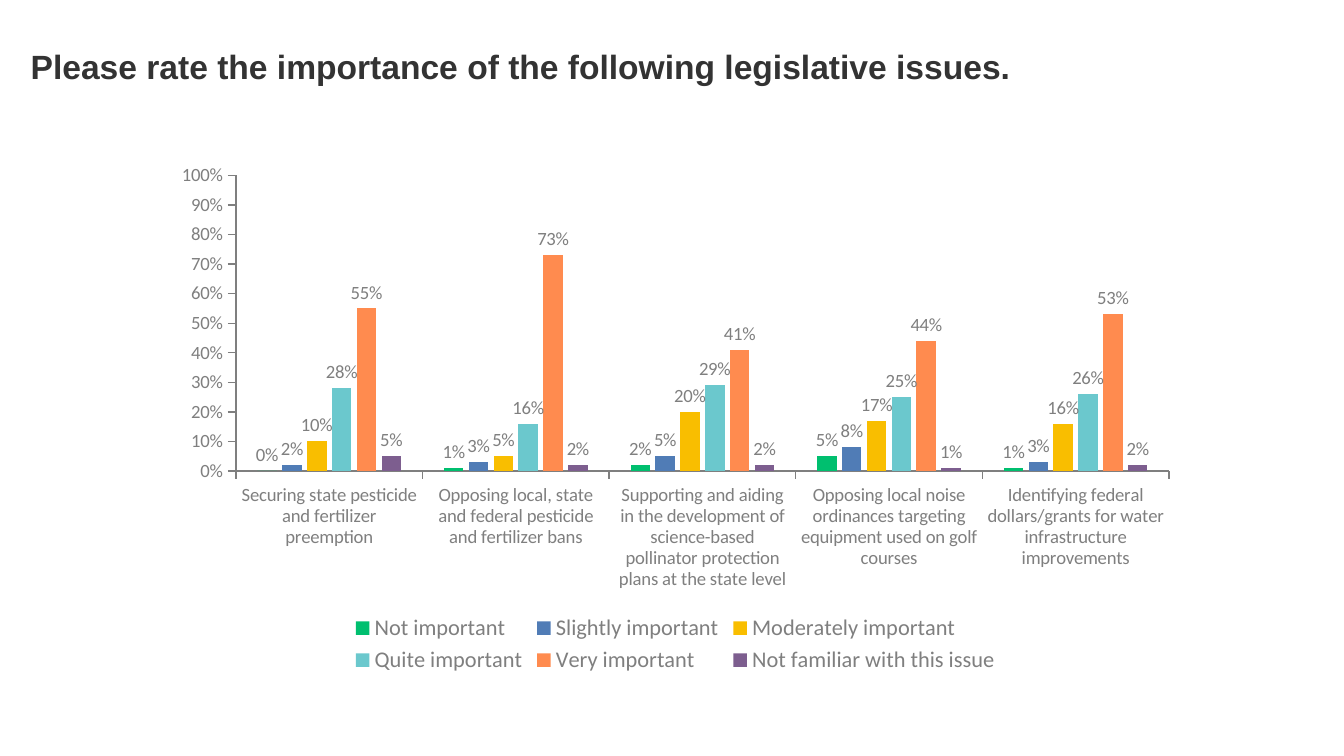
from typing import NamedTuple

import pptx
import pptx.chart.data
import pptx.dml.color
import pptx.enum.chart
import pptx.enum.text
import pptx.util
from pptx.dml.color import RGBColor
from pptx.util import Cm, Pt

INK = RGBColor(0x33, 0x33, 0x33)
GRAY = RGBColor(0x7F, 0x7F, 0x7F)
GREEN = RGBColor(0x00, 0xBF, 0x6F)
BLUE = RGBColor(0x50, 0x7C, 0xB6)
YELLOW = RGBColor(0xF9, 0xBE, 0x00)
TEAL = RGBColor(0x6B, 0xC8, 0xCD)
ORANGE = RGBColor(0xFF, 0x8B, 0x4F)
PURPLE = RGBColor(0x7D, 0x5E, 0x8F)
PERCENT = "0%"


class Rating(NamedTuple):
    name: str
    shares: tuple[float, ...]
    color: RGBColor


ISSUES = (
    "Securing state pesticide and fertilizer preemption",
    "Opposing local, state and federal pesticide and fertilizer bans",
    "Supporting and aiding in the development of science-based "
    "pollinator protection plans at the state level",
    "Opposing local noise ordinances targeting equipment used on golf courses",
    "Identifying federal dollars/grants for water infrastructure improvements",
)
RATINGS = (
    Rating("Not important", (0, 0.01, 0.02, 0.05, 0.01), GREEN),
    Rating("Slightly important", (0.02, 0.03, 0.05, 0.08, 0.03), BLUE),
    Rating("Moderately important", (0.1, 0.05, 0.2, 0.17, 0.16), YELLOW),
    Rating("Quite important", (0.28, 0.16, 0.29, 0.25, 0.26), TEAL),
    Rating("Very important", (0.55, 0.73, 0.41, 0.44, 0.53), ORANGE),
    Rating("Not familiar with this issue", (0.05, 0.02, 0.02, 0.01, 0.02), PURPLE),
)


def style_font(font, size: float, color: RGBColor, family: str = "Calibri") -> None:
    font.size = Pt(size)
    font.name = family
    font.color.rgb = color


def add_question(slide, wording: str) -> None:
    question = slide.shapes.add_textbox(Cm(0.33), Cm(0.23), Cm(22.86), Cm(1.52))
    frame = question.text_frame
    frame.word_wrap = True
    frame.vertical_anchor = pptx.enum.text.MSO_ANCHOR.BOTTOM
    run = frame.paragraphs[0].add_run()
    run.text = wording
    run.font.bold = True
    style_font(run.font, 18, INK, "Arial")


def style_axis(axis) -> None:
    axis.has_major_gridlines = False
    axis.major_tick_mark = pptx.enum.chart.XL_TICK_MARK.OUTSIDE
    axis.minor_tick_mark = pptx.enum.chart.XL_TICK_MARK.NONE
    axis.format.line.color.rgb = GRAY
    axis.format.line.width = Pt(0.75)
    style_font(axis.tick_labels.font, 10, GRAY)


def style_series(series, color: RGBColor) -> None:
    series.format.fill.solid()
    series.format.fill.fore_color.rgb = color
    series.invert_if_negative = False
    labels = series.data_labels
    labels.show_value = True
    labels.number_format = PERCENT
    labels.number_format_is_linked = False
    labels.position = pptx.enum.chart.XL_LABEL_POSITION.OUTSIDE_END
    style_font(labels.font, 10, GRAY)


def add_ratings_chart(slide) -> None:
    data = pptx.chart.data.CategoryChartData(number_format=PERCENT)
    data.categories = ISSUES
    for rating in RATINGS:
        data.add_series(rating.name, rating.shares)
    chart = slide.shapes.add_chart(
        pptx.enum.chart.XL_CHART_TYPE.COLUMN_CLUSTERED,
        Cm(3.05), Cm(2.92), Cm(19.43), Cm(9.91), data,
    ).chart
    chart.has_title = False
    style_font(chart.font, 18, INK)

    style_axis(chart.category_axis)
    chart.category_axis.tick_label_position = pptx.enum.chart.XL_TICK_LABEL_POSITION.LOW
    style_axis(chart.value_axis)
    chart.value_axis.minimum_scale = 0
    chart.value_axis.maximum_scale = 1
    chart.value_axis.major_unit = 0.1
    chart.value_axis.tick_labels.number_format = PERCENT
    chart.value_axis.tick_labels.number_format_is_linked = False

    columns = chart.plots[0]
    columns.vary_by_categories = False
    columns.gap_width = 219
    columns.overlap = -27
    for series, rating in zip(columns.series, RATINGS):
        style_series(series, rating.color)

    chart.has_legend = True
    chart.legend.position = pptx.enum.chart.XL_LEGEND_POSITION.BOTTOM
    chart.legend.include_in_layout = False
    style_font(chart.legend.font, 12, GRAY)


def main() -> None:
    deck = pptx.Presentation()
    deck.slide_width = Cm(25.4)
    deck.slide_height = Cm(14.29)
    slide = deck.slides.add_slide(deck.slide_layouts[6])
    add_question(
        slide, "Please rate the importance of the following legislative issues."
    )
    add_ratings_chart(slide)
    deck.save("out.pptx")


if __name__ == "__main__":
    main()
